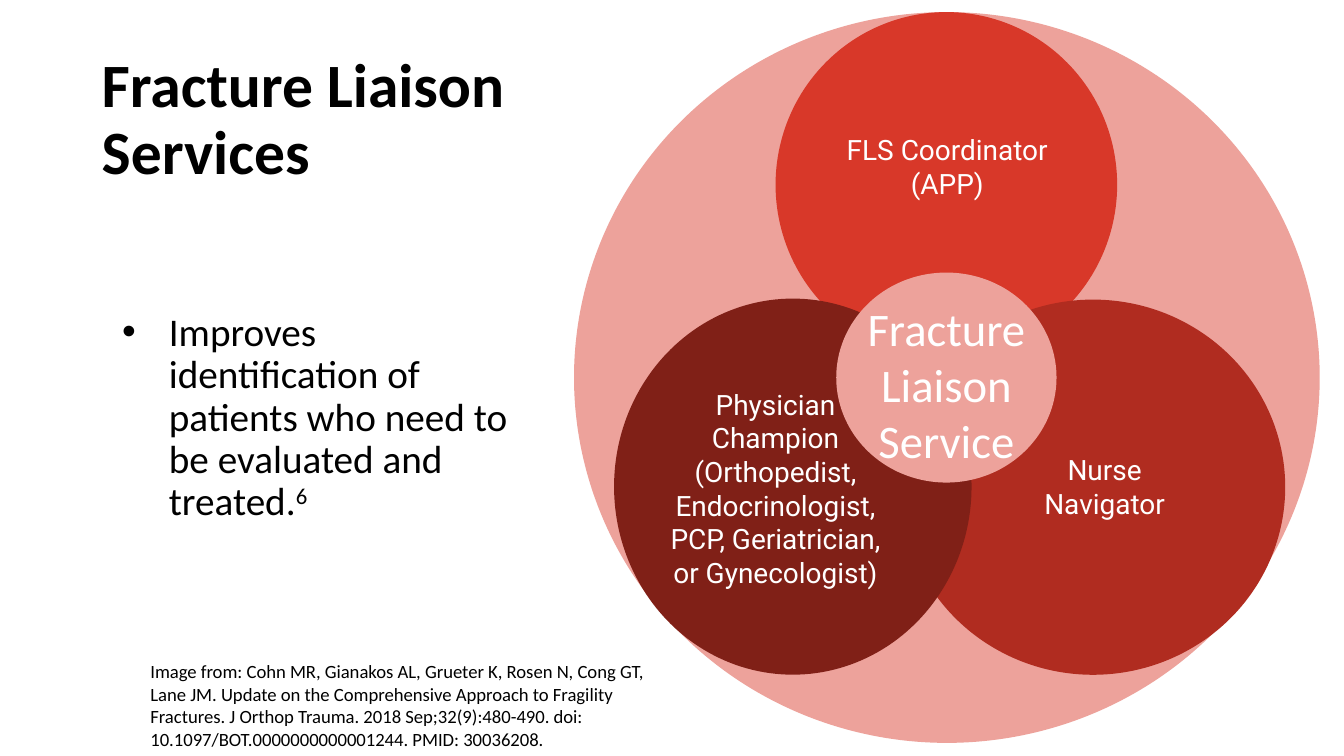
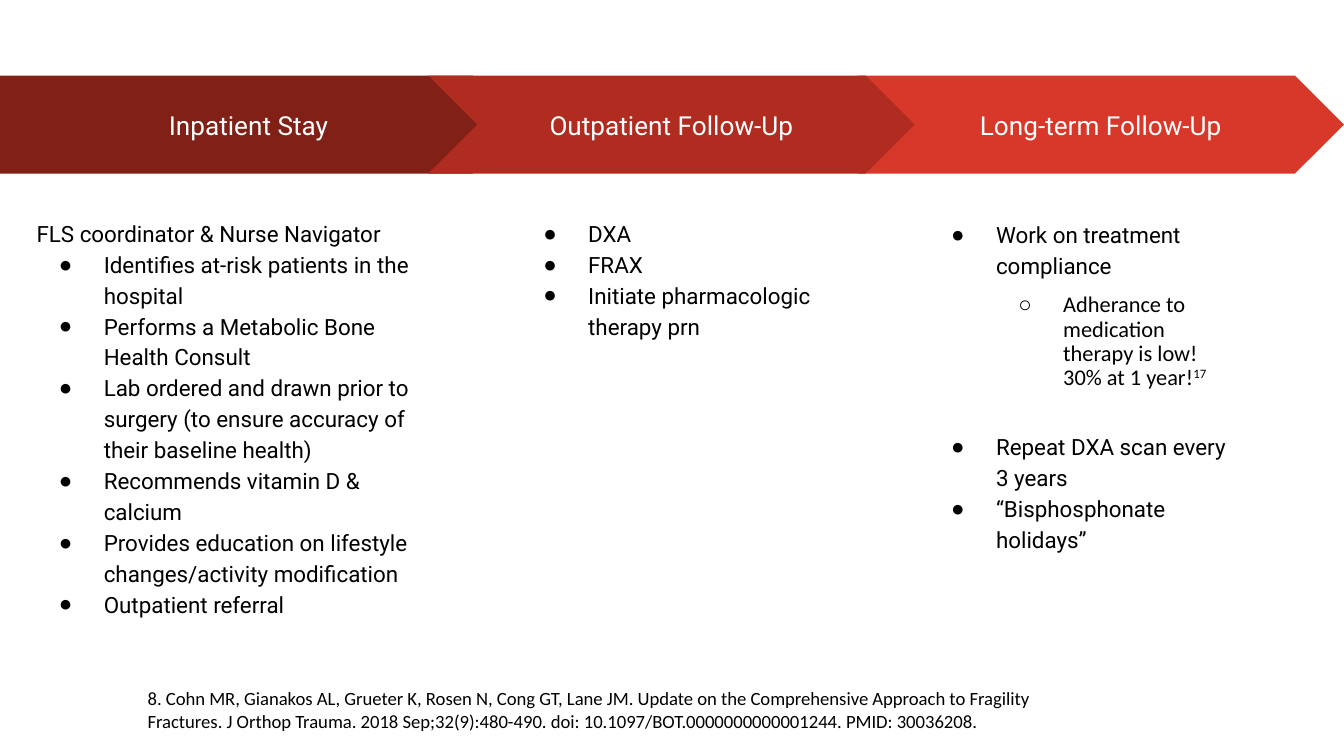
"""Builds two slides about fracture liaison services."""
from lxml.etree import SubElement
from pptx import Presentation
from pptx.dml.color import RGBColor
from pptx.enum.shapes import MSO_SHAPE
from pptx.enum.text import MSO_ANCHOR, PP_ALIGN
from pptx.oxml.ns import qn
from pptx.util import Pt

BLACK, WHITE, PINK = "000000", "FFFFFF", "EDA29B"
BRIGHT, MIDDLE, DARK = "D83829", "B02C20", "802017"
BODY, LABEL = "Calibri", "Roboto"
SNUG, ROOMY = (5, 3), (7.2, 7.2)
TITLE_ONLY, BLANK = 5, 6
CITATION = ("Cohn MR, Gianakos AL, Grueter K, Rosen N, Cong GT, Lane JM. "
            "Update on the Comprehensive Approach to Fragility Fractures. "
            "J Orthop Trauma. 2018 Sep;32(9):480-490. "
            "doi: 10.1097/BOT.0000000000001244. PMID: 30036208.")


def color(value):
    """Turn a hex string into a colour."""
    return RGBColor.from_string(value)


def write(para, text, font=BODY, size=12, ink=BLACK, bold=False, raised=False):
    """Append formatted text to a paragraph."""
    span = para.add_run()
    span.text = text
    span.font.name, span.font.size, span.font.bold = font, Pt(size), bold
    span.font.color.rgb = color(ink)
    if raised:
        span.font._element.set("baseline", "30000")


class Page:
    """One slide with the shared style."""

    def __init__(self, deck, layout):
        """Add a slide to the deck."""
        self.slide = deck.slides.add_slide(deck.slide_layouts[layout])

    def frame(self, shape, anchor=MSO_ANCHOR.TOP, inset=ROOMY):
        """Prepare the text frame of a shape."""
        frame = shape.text_frame
        frame.word_wrap, frame.vertical_anchor = True, anchor
        frame.margin_left = frame.margin_right = Pt(inset[0])
        frame.margin_top = frame.margin_bottom = Pt(inset[1])
        return frame

    def box(self, area, **style):
        """Add a text box and return its frame."""
        return self.frame(self.slide.shapes.add_textbox(*map(Pt, area)), **style)

    def paragraph(self, frame, text, align=PP_ALIGN.LEFT, spacing=1.0, before=0,
                  bullet=None, indent=36, hang=24, note=None, **style):
        """Add a paragraph, optionally with a bullet and a raised note number."""
        para = frame.paragraphs[0]
        if para.runs:
            para = frame.add_paragraph()
        if bullet:
            properties = para._p.get_or_add_pPr()
            properties.set("marL", str(Pt(indent)))
            properties.set("indent", str(-Pt(hang)))
            SubElement(properties, qn("a:buFont"), typeface="Arial")
            SubElement(properties, qn("a:buChar"), char=bullet)
        para.alignment, para.line_spacing = align, spacing
        para.space_before = Pt(before)
        write(para, text, **style)
        if note:
            write(para, note, raised=True, **style)

    def title(self, area, text):
        """Place and format the title placeholder."""
        title = self.slide.shapes.title
        title.left, title.top, title.width, title.height = map(Pt, area)
        frame = self.frame(title, MSO_ANCHOR.MIDDLE, SNUG)
        self.paragraph(frame, text, spacing=0.9, size=33, bold=True)

    def shape(self, kind, area, fill):
        """Add a flat filled shape."""
        shape = self.slide.shapes.add_shape(kind, *map(Pt, area))
        shape.shadow.inherit = False
        shape.fill.solid()
        shape.fill.fore_color.rgb = color(fill)
        shape.line.fill.background()
        return shape

    def circle(self, area, fill, label_area=None, lines=(), anchor=MSO_ANCHOR.MIDDLE, **style):
        """Add an ellipse with a centred label."""
        self.shape(MSO_SHAPE.OVAL, area, fill)
        if lines:
            frame = self.box(label_area, anchor=anchor)
            for line in lines:
                self.paragraph(frame, line, PP_ALIGN.CENTER, ink=WHITE, **style)

    def stage(self, kind, left, width, fill, text):
        """Add one arrow of the care pathway."""
        arrow = self.shape(kind, (left, 40.5, width, 52.5), fill)
        arrow.adjustments[0] = 0.5
        frame = self.frame(arrow, MSO_ANCHOR.MIDDLE)
        self.paragraph(frame, text, PP_ALIGN.CENTER, font=LABEL, size=14, ink=WHITE)

    def bullets(self, frame, items, **style):
        """Add the bulleted steps of a stage."""
        for item in items:
            self.paragraph(frame, item, spacing=1.15, bullet="●", font=LABEL, **style)

    def source(self, area, text):
        """Add the source reference."""
        self.paragraph(self.box(area), text, size=10)


def services(deck):
    """Build the slide with the team circles."""
    page = Page(deck, TITLE_ONLY)
    page.circle((307.5, 6.5, 399.5, 391.5), PINK)
    team = (
        ((415.5, 6.5, 183, 185), BRIGHT, (444, 59, 127, 60), ["FLS Coordinator (APP)"]),
        ((482.5, 160.5, 206, 201), MIDDLE, (520.5, 228, 142.5, 65), ["Nurse", "Navigator"]),
        ((329, 160, 191.5, 201.5), DARK, (345, 208.5, 141, 106),
         ["Physician Champion",
          "(Orthopedist, Endocrinologist, PCP, Geriatrician, or Gynecologist)"]),
    )
    for member in team:
        page.circle(*member, font=LABEL, size=15)
    page.circle((448, 146, 118, 112.5), PINK, (448, 153.5, 118, 98),
                ["Fracture Liaison Service"], MSO_ANCHOR.TOP, size=25)
    page.source((73.5, 346.5, 296.5, 45), "Image from: " + CITATION)
    page.title((49.5, 21.5, 283.5, 86.5), "Fracture Liaison Services")
    body = page.box((49.5, 116.5, 239, 215.5), anchor=MSO_ANCHOR.MIDDLE, inset=SNUG)
    page.paragraph(body, "Improves identification of patients who need to be evaluated and treated.",
                   spacing=0.9, bullet="•", hang=25, note="6", size=21)


def pathway(deck):
    """Build the slide with the three stages of care."""
    page = Page(deck, BLANK)
    page.stage(MSO_SHAPE.CHEVRON, 459.5, 260.5, BRIGHT, "Long-term Follow-Up")
    page.stage(MSO_SHAPE.PENTAGON, 0, 279.5, DARK, "Inpatient Stay")
    page.stage(MSO_SHAPE.CHEVRON, 229.5, 260.5, MIDDLE, "Outpatient Follow-Up")

    inpatient = page.box((12.5, 108.5, 217.5, 206))
    page.paragraph(inpatient, "FLS coordinator & Nurse Navigator", spacing=1.15, font=LABEL)
    page.bullets(inpatient, (
        "Identifies at-risk patients in the hospital",
        "Performs a Metabolic Bone Health Consult",
        "Lab ordered and drawn prior to surgery (to ensure accuracy of their baseline health)",
        "Recommends vitamin D & calcium",
        "Provides education on lifestyle changes/activity modification",
        "Outpatient referral"))

    outpatient = page.box((272, 108.5, 176.5, 206))
    page.bullets(outpatient, ("DXA", "FRAX", "Initiate pharmacologic therapy prn"))

    long_term = page.box((490.5, 109, 176.5, 258.5))
    page.bullets(long_term, ["Work on treatment compliance"])
    page.paragraph(long_term, "Adherance to medication therapy is low! 30% at 1 year!",
                   spacing=0.9, before=8, bullet="○", indent=72, note="17")
    page.bullets(long_term, ["Repeat DXA scan every 3 years"], before=21)
    page.bullets(long_term, ["“Bisphosphonate holidays”"])
    page.source((72, 361, 512, 34.5), "8. " + CITATION)


def main():
    """Build and save the deck."""
    deck = Presentation()
    deck.slide_width, deck.slide_height = Pt(720), Pt(405)
    services(deck)
    pathway(deck)
    deck.save("out.pptx")


if __name__ == "__main__":
    main()
